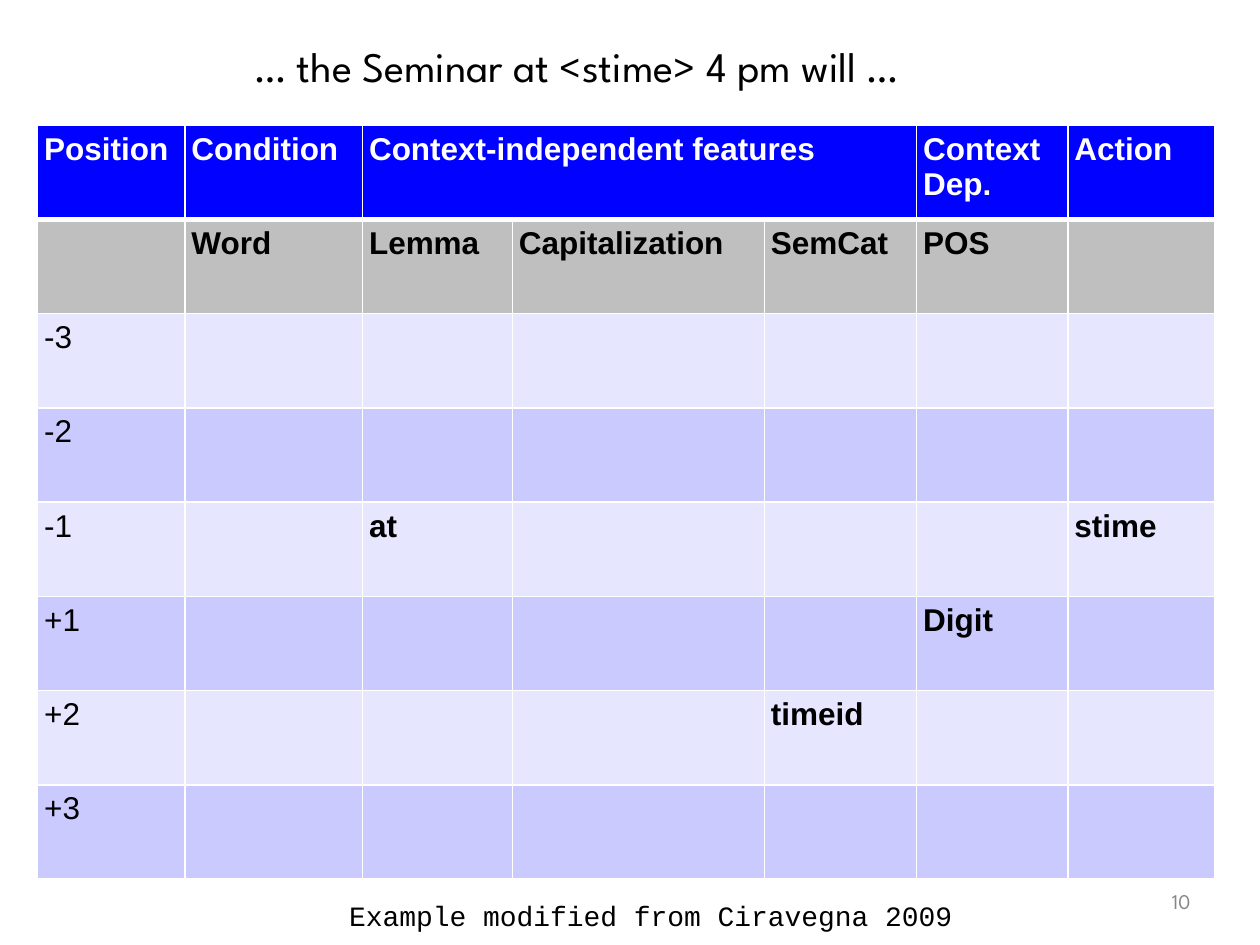
"""Build a slide with a table of tagging-rule conditions around a seminar start time."""
from dataclasses import dataclass

from lxml.etree import SubElement
from pptx import Presentation
from pptx.dml.color import RGBColor
from pptx.enum.text import MSO_ANCHOR, PP_ALIGN
from pptx.oxml.ns import qn
from pptx.util import Cm, Pt

COLORS = {
    "white": "FFFFFF",
    "black": "000000",
    "header": "0001FF",
    "subheader": "BFBFBF",
    "light": "E6E6FF",
    "dark": "CACAFF",
    "number": "888888",
}
INSET = Cm(0.13)
COLUMN_WIDTHS = (2.97, 3.58, 3.02, 5.08, 3.07, 3.05, 2.95)
ROW_HEIGHT = 1.9
ROWS = (
    ("Position", "Condition", "Context-independent features", "", "", "Context Dep.", "Action"),
    ("", "Word", "Lemma", "Capitalization", "SemCat", "POS", ""),
    ("-3", "", "", "", "", "", ""),
    ("-2", "", "", "", "", "", ""),
    ("-1", "", "at", "", "", "", "stime"),
    ("+1", "", "", "", "", "Digit", ""),
    ("+2", "", "", "", "timeid", "", ""),
    ("+3", "", "", "", "", "", ""),
)


@dataclass
class Label:
    """A line of text with its place in centimetres and its look."""

    text: str
    left: float
    top: float
    width: float
    height: float
    font: str
    size: int
    color: str = "black"
    align: PP_ALIGN = PP_ALIGN.LEFT
    anchor: MSO_ANCHOR = MSO_ANCHOR.TOP
    wrap: bool = True


TITLE = Label("… the Seminar at <stime> 4 pm will …", 5, 0.69, 19.38, 1.27, "League Spartan", 24)
LABELS = (
    Label("Example modified from Ciravegna 2009", 6.91, 17.98, 12.73, 0.89, "Courier New", 16),
    Label("10", 23.37, 17.78, 0.76, 0.79, "League Spartan", 12, "number",
          PP_ALIGN.RIGHT, MSO_ANCHOR.MIDDLE, False),
)


def style_paragraph(paragraph, font: str, size: int, color: str, bold: bool = False) -> None:
    """Set the font of a whole paragraph."""
    paragraph.font.name = font
    paragraph.font.size = Pt(size)
    paragraph.font.bold = bold
    paragraph.font.color.rgb = RGBColor.from_string(COLORS[color])


def fill_label(box, label: Label) -> None:
    """Place a box and write a label into it."""
    box.left, box.top = Cm(label.left), Cm(label.top)
    box.width, box.height = Cm(label.width), Cm(label.height)
    frame = box.text_frame
    frame.text = label.text
    frame.word_wrap = label.wrap
    frame.vertical_anchor = label.anchor
    frame.margin_left = frame.margin_right = frame.margin_top = frame.margin_bottom = INSET
    paragraph = frame.paragraphs[0]
    paragraph.alignment = label.align
    style_paragraph(paragraph, label.font, label.size, label.color)


def add_borders(cell, top: float, bottom: float) -> None:
    """Draw white borders, with the given top and bottom widths in points."""
    properties = cell._tc.get_or_add_tcPr()
    widths = {"a:lnL": 1, "a:lnR": 1, "a:lnT": top, "a:lnB": bottom}
    for index, (tag, width) in enumerate(widths.items()):
        line = SubElement(properties, qn(tag), w=str(Pt(width)))
        fill = SubElement(line, qn("a:solidFill"))
        SubElement(fill, qn("a:srgbClr"), val=COLORS["white"])
        properties.insert(index, line)


def row_color(row: int) -> str:
    """Name the fill of a table row."""
    if row < 2:
        return ("header", "subheader")[row]
    return ("light", "dark")[row % 2]


def add_rule_table(page) -> None:
    """Add the table of positions, conditions and features."""
    frame = page.shapes.add_table(
        len(ROWS), len(COLUMN_WIDTHS), Cm(0.76), Cm(2.52),
        Cm(sum(COLUMN_WIDTHS)), Cm(ROW_HEIGHT * len(ROWS)))
    table = frame.table
    for column, width in zip(table.columns, COLUMN_WIDTHS):
        column.width = Cm(width)
    for row, texts in enumerate(ROWS):
        table.rows[row].height = Cm(ROW_HEIGHT)
        for column, text in enumerate(texts):
            cell = table.cell(row, column)
            cell.text = text
            cell.margin_left = cell.margin_right = INSET
            cell.margin_top = cell.margin_bottom = INSET
            cell.fill.solid()
            cell.fill.fore_color.rgb = RGBColor.from_string(COLORS[row_color(row)])
            add_borders(cell, 3 if row == 1 else 1, 3 if row == 0 else 1)
            style_paragraph(cell.text_frame.paragraphs[0], "Arial", 18,
                            "white" if row == 0 else "black", row < 2 or column > 0)
    table.cell(0, 2).merge(table.cell(0, 4))


def main() -> None:
    """Build and save the deck."""
    deck = Presentation()
    deck.slide_width, deck.slide_height = Cm(25.4), Cm(19.05)
    page = deck.slides.add_slide(deck.slide_layouts[5])
    fill_label(page.shapes.title, TITLE)
    add_rule_table(page)
    for label in LABELS:
        box = page.shapes.add_textbox(0, 0, 0, 0)
        fill_label(box, label)
    deck.save("out.pptx")


if __name__ == "__main__":
    main()
